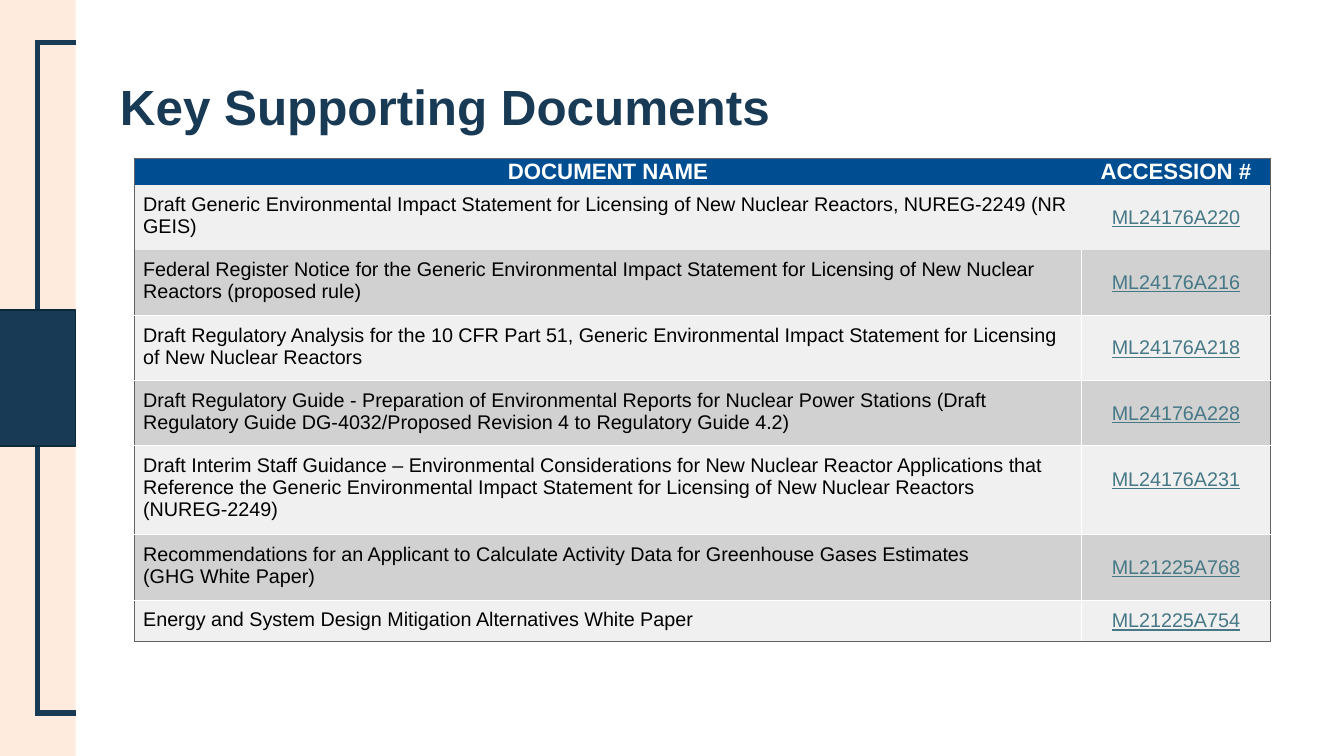
from pptx import Presentation
from pptx.dml.color import RGBColor
from pptx.enum.shapes import MSO_CONNECTOR, MSO_SHAPE
from pptx.enum.text import MSO_ANCHOR, PP_ALIGN
from pptx.oxml.ns import qn
from pptx.util import Pt
from lxml.etree import SubElement

PX = 9144
FONT = "Arial"
COLORS = {
    "peach": "FEEBDE",
    "navy": "193A54",
    "navy_edge": "092A39",
    "header": "004E92",
    "light": "F0F0F0",
    "dark": "D1D1D1",
    "frame": "616265",
    "white": "FFFFFF",
    "black": "000000",
    "accession": "467886",
}
HEADINGS = ("DOCUMENT NAME", "ACCESSION #")
DOCUMENTS = [
    ("Draft Generic Environmental Impact Statement for Licensing of New Nuclear Reactors, "
     "NUREG-2249 (NR GEIS)", "ML24176A220"),
    ("Federal Register Notice for the Generic Environmental Impact Statement for Licensing of "
     "New Nuclear Reactors (proposed rule)", "ML24176A216"),
    ("Draft Regulatory Analysis for the 10 CFR Part 51, Generic Environmental Impact Statement "
     "for Licensing of New Nuclear Reactors", "ML24176A218"),
    ("Draft Regulatory Guide - Preparation of Environmental Reports for Nuclear Power Stations "
     "(Draft Regulatory Guide DG-4032/Proposed Revision 4 to Regulatory Guide 4.2)", "ML24176A228"),
    ("Draft Interim Staff Guidance – Environmental Considerations for New Nuclear Reactor "
     "Applications that Reference the Generic Environmental Impact Statement for Licensing of "
     "New Nuclear Reactors (NUREG-2249)", "ML24176A231"),
    ("Recommendations for an Applicant to Calculate Activity Data for Greenhouse Gases Estimates\n"
     "(GHG White Paper)", "ML21225A768"),
    ("Energy and System Design Mitigation Alternatives White Paper", "ML21225A754"),
]
COLUMN_WIDTHS = (1065, 212)
ROW_HEIGHTS = (28, 69, 69, 69, 69, 93, 70, 45)
TALL_ROW = 5


def rgb(name):
    return RGBColor.from_string(COLORS[name])


class DocumentSlide:
    def __init__(self, presentation):
        self.slide = presentation.slides.add_slide(presentation.slide_layouts[6])
        self.shapes = self.slide.shapes

    def block(self, left, top, width, height, fill, edge=None):
        block = self.shapes.add_shape(
            MSO_SHAPE.RECTANGLE, left * PX, top * PX, width * PX, height * PX)
        block.shadow.inherit = False
        block.fill.solid()
        block.fill.fore_color.rgb = rgb(fill)
        if edge:
            block.line.color.rgb = rgb(edge)
            block.line.width = Pt(1.5)
        else:
            block.line.fill.background()

    def rule(self, x1, y1, x2, y2):
        rule = self.shapes.add_connector(
            MSO_CONNECTOR.STRAIGHT, x1 * PX, y1 * PX, x2 * PX, y2 * PX)
        rule.line.color.rgb = rgb("navy")
        rule.line.width = Pt(4.5)
        SubElement(rule._element.spPr, qn("a:effectLst"))

    def label(self, paragraph, text, size, color, bold=False, underline=False):
        paragraph.text = text
        for run in paragraph.runs:
            run.font.name = FONT
            run.font.size = Pt(size)
            run.font.bold = bold
            run.font.underline = underline
            run.font.color.rgb = rgb(color)

    def title(self, left, top, width, height, text):
        frame = self.shapes.add_textbox(
            left * PX, top * PX, width * PX, height * PX).text_frame
        frame.word_wrap = True
        frame.vertical_anchor = MSO_ANCHOR.MIDDLE
        frame.paragraphs[0].line_spacing = 0.9
        self.label(frame.paragraphs[0], text, 40, "navy", bold=True)

    def border(self, cell, side, color):
        edge = SubElement(cell._tc.get_or_add_tcPr(), qn("a:ln" + side), w=str(Pt(1)))
        if color:
            fill = SubElement(edge, qn("a:solidFill"))
            SubElement(fill, qn("a:srgbClr"), val=COLORS[color])
        else:
            SubElement(edge, qn("a:noFill"))

    def cell(self, cell, fill, inset_x, inset_y, borders):
        cell.margin_left = cell.margin_right = inset_x * PX
        cell.margin_top = cell.margin_bottom = inset_y * PX
        for side, color in borders.items():
            self.border(cell, side, color)
        cell.fill.solid()
        cell.fill.fore_color.rgb = rgb(fill)

    def table(self, left, top, headings, documents):
        rows = [headings, *documents]
        table = self.shapes.add_table(
            len(rows), len(headings), left * PX, top * PX,
            sum(COLUMN_WIDTHS) * PX, sum(ROW_HEIGHTS) * PX).table
        table.horz_banding = False
        for column, width in zip(table.columns, COLUMN_WIDTHS):
            column.width = width * PX
        last = len(rows) - 1
        for r, entries in enumerate(rows):
            table.rows[r].height = ROW_HEIGHTS[r] * PX
            divider = "white" if r > 1 else None
            for c, text in enumerate(entries):
                cell = table.cell(r, c)
                borders = {
                    "L": divider if c else "frame",
                    "R": "frame" if c else divider,
                    "T": "frame" if r == 0 else "white" if r > 2 else None,
                    "B": "frame" if r == last else divider,
                }
                paragraph = cell.text_frame.paragraphs[0]
                if r == 0:
                    self.cell(cell, "header", 7, 0, borders)
                    self.label(paragraph, text, 18, "white", bold=True)
                else:
                    self.cell(cell, "light" if r % 2 else "dark", 10, 10, borders)
                    self.label(paragraph, text, 16, "accession" if c else "black",
                               underline=bool(c))
                if r == 0 or c:
                    paragraph.alignment = PP_ALIGN.CENTER
                    cell.vertical_anchor = MSO_ANCHOR.MIDDLE
        table.cell(TALL_ROW, 1).margin_bottom = 35 * PX


def main():
    presentation = Presentation()
    presentation.slide_width = 1511 * PX
    presentation.slide_height = 850 * PX
    page = DocumentSlide(presentation)
    page.block(-1, 0, 86, 850, "peach")
    page.rule(42, 45, 42, 805)
    for y in (48, 802):
        page.rule(41, y, 86, y)
    page.block(-1, 349, 86, 153, "navy", "navy_edge")
    page.title(125, 53, 1303, 140, "Key Supporting Documents")
    page.table(151, 178, HEADINGS, DOCUMENTS)
    presentation.save("out.pptx")


if __name__ == "__main__":
    main()
